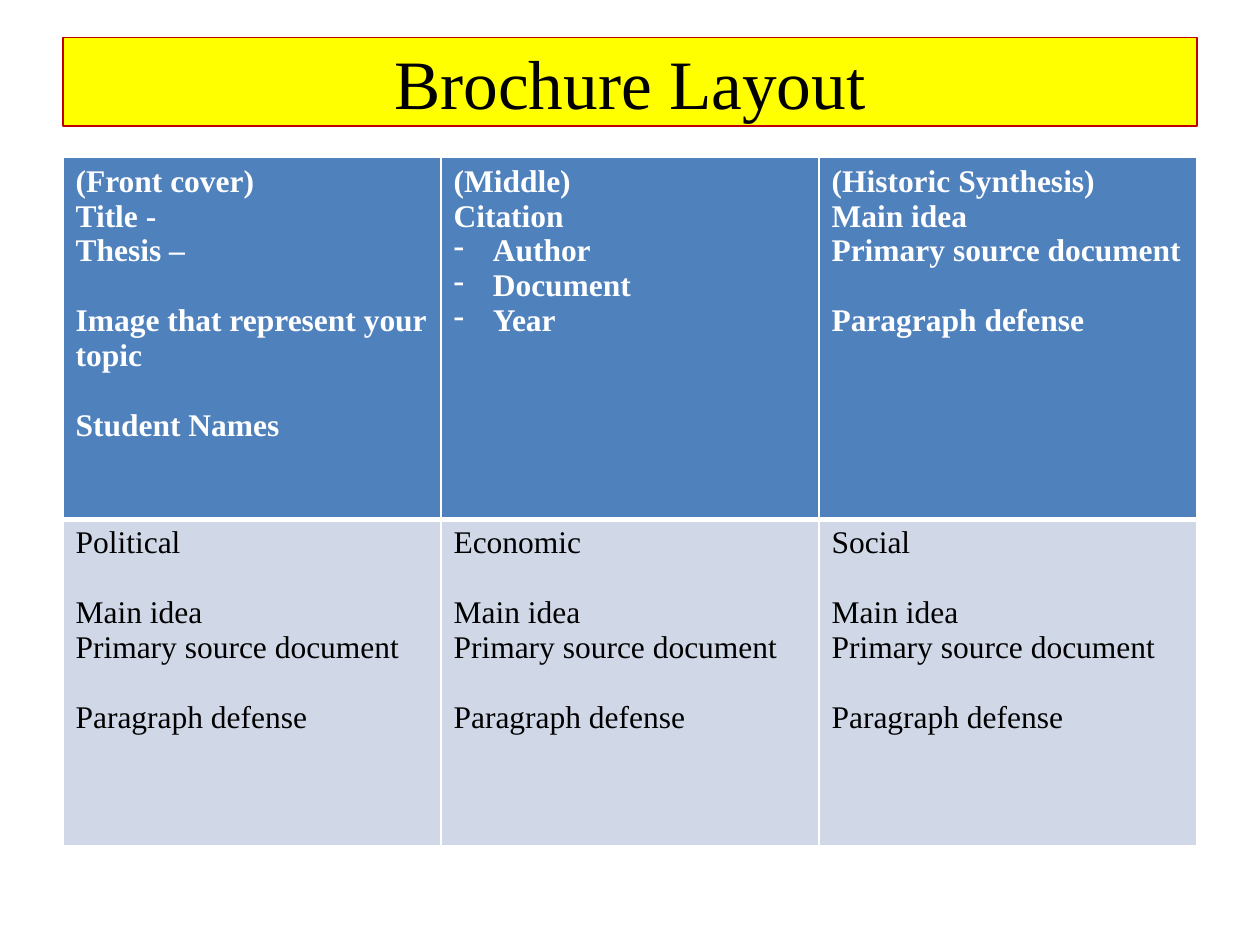
import pptx
import pptx.dml.color
import pptx.enum.shapes
import pptx.enum.text
import pptx.oxml
import pptx.oxml.ns
import pptx.util
import lxml.etree

Cm = pptx.util.Cm
Pt = pptx.util.Pt
COLORS = {
    "banner": "FFFF00",
    "banner_line": "C00000",
    "header": "4F81BD",
    "body": "D0D8E8",
    "light": "FFFFFF",
    "dark": "000000",
}
FONT = "Times New Roman"
LINE_GAP = Pt(20)


def color(name):
    return pptx.dml.color.RGBColor.from_string(COLORS[name])


def add_border(cell, side, width):
    properties = cell._tc.get_or_add_tcPr()
    properties.append(pptx.oxml.parse_xml(
        f'<a:{side} {pptx.oxml.ns.nsdecls("a")} w="{Pt(width)}"><a:solidFill>'
        f'<a:srgbClr val="{COLORS["light"]}"/></a:solidFill></a:{side}>'))


deck = pptx.Presentation()
deck.slide_width = Cm(25.4)
deck.slide_height = Cm(19.05)
slide = deck.slides.add_slide(deck.slide_layouts[6])

banner = slide.shapes.add_shape(
    pptx.enum.shapes.MSO_SHAPE.RECTANGLE, Cm(1.27), Cm(0.76), Cm(22.86), Cm(1.78))
banner.shadow.inherit = False
banner.fill.solid()
banner.fill.fore_color.rgb = color("banner")
banner.line.color.rgb = color("banner_line")
banner.line.width = Pt(0.75)
banner.text_frame.text = "Brochure Layout"
banner.text_frame.vertical_anchor = pptx.enum.text.MSO_ANCHOR.MIDDLE
heading = banner.text_frame.paragraphs[0]
heading.alignment = pptx.enum.text.PP_ALIGN.CENTER
heading.font.name = FONT
heading.font.size = Pt(39.6)
heading.font.color.rgb = color("dark")

defense = ["Main idea", "Primary source document", "Paragraph defense"]
panels = [
    [
        ["(Front cover)", "Title -", "Thesis –", "Image that represent your topic", "Student Names"],
        ["(Middle)", "Citation", "Author", "Document", "Year"],
        ["(Historic Synthesis)"] + defense,
    ],
    [[theme] + defense for theme in ("Political", "Economic", "Social")],
]
spaced = {"Image that represent your topic", "Student Names", "Paragraph defense"}
bulleted = {"Author", "Document", "Year"}
row_styles = [
    (Cm(7.29), "header", "light", True, 1, 3),
    (Cm(6.58), "body", "dark", False, 3, 1),
]

brochure = slide.shapes.add_table(2, 3, Cm(1.27), Cm(3.18), Cm(22.86), Cm(13.87)).table
for column in brochure.columns:
    column.width = Cm(7.62)

for row, (height, fill, ink, bold, top, bottom) in enumerate(row_styles):
    brochure.rows[row].height = height
    for col, lines in enumerate(panels[row]):
        cell = brochure.cell(row, col)
        for side, width in (("lnL", 1), ("lnR", 1), ("lnT", top), ("lnB", bottom)):
            add_border(cell, side, width)
        cell.fill.solid()
        cell.fill.fore_color.rgb = color(fill)
        cell.text_frame.text = "\n".join(lines)
        for paragraph in cell.text_frame.paragraphs:
            line = paragraph.text
            if line in spaced or (row == 1 and line == "Main idea"):
                paragraph.space_before = LINE_GAP
            if line in bulleted:
                layout = paragraph._p.get_or_add_pPr()
                layout.set("marL", str(Cm(0.79)))
                layout.set("indent", str(-Cm(0.79)))
                bullet = lxml.etree.SubElement(layout, pptx.oxml.ns.qn("a:buChar"))
                bullet.set("char", "-")
            paragraph.font.name = FONT
            paragraph.font.size = Pt(18)
            paragraph.font.bold = bold
            paragraph.font.color.rgb = color(ink)
            for run in paragraph.runs:
                run.font.name = FONT
                run.font.size = Pt(18)
                run.font.bold = bold
                run.font.color.rgb = color(ink)

deck.save("out.pptx")
